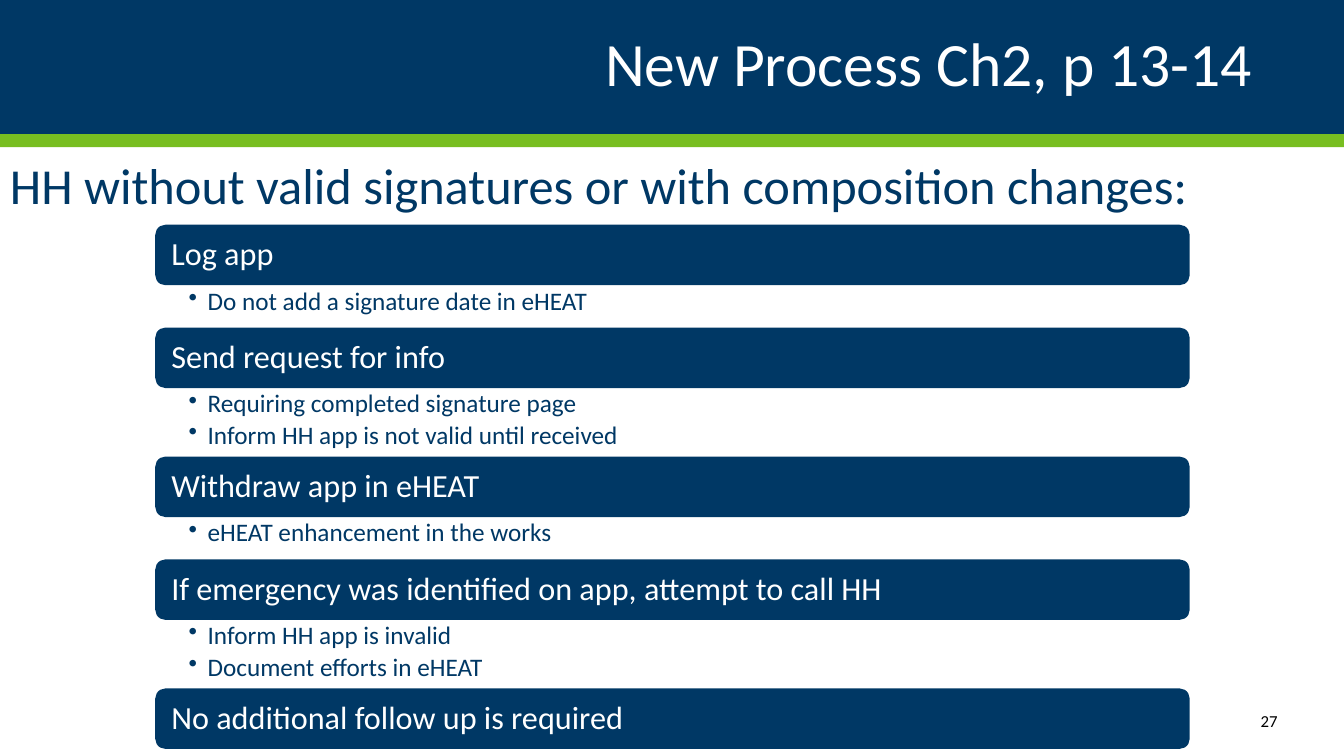
"""Build the slide on handling households without valid signatures."""
from dataclasses import dataclass

from pptx import Presentation
from pptx import util as u
from pptx.dml.color import RGBColor
from pptx.enum import shapes, text
from pptx.oxml import ns
from lxml import etree


@dataclass(frozen=True)
class Theme:
    """Colours, font and type sizes of the slide."""
    navy: str = "003865"
    green: str = "78BE21"
    white: str = "FFFFFF"
    black: str = "000000"
    font: str = "Calibri"
    title_size: int = 44
    heading_size: int = 36
    step_size: int = 23
    detail_size: int = 18
    number_size: int = 12


THEME = Theme()
SLIDE_WIDTH, SLIDE_HEIGHT = 13.33, 7.5
STEPS_LEFT, STEPS_TOP, STEPS_WIDTH = 1.54, 2.23, 10.26
BAR_HEIGHT = 0.6
DETAIL_PADDING, DETAIL_LINE = 0.16, 0.26
STEPS = [
    ("Log app", ["Do not add a signature date in eHEAT"]),
    ("Send request for info", ["Requiring completed signature page",
                               "Inform HH app is not valid until received"]),
    ("Withdraw app in eHEAT", ["eHEAT enhancement in the works"]),
    ("If emergency was identified on app, attempt to call HH",
     ["Inform HH app is invalid", "Document efforts in eHEAT"]),
    ("No additional follow up is required", []),
]


def box(left, top, width, height):
    """Return a position and size in inches as lengths."""
    return [u.Inches(value) for value in (left, top, width, height)]


def add_bullet(paragraph, indent=0.19):
    """Give a paragraph a hanging round bullet."""
    properties = paragraph._p.get_or_add_pPr()
    properties.set("marL", str(u.Inches(indent)))
    properties.set("indent", str(-u.Inches(indent)))
    etree.SubElement(properties, ns.qn("a:buChar")).set("char", "•")


def write_text(shape, lines, *, size, color, align=text.PP_ALIGN.LEFT,
               anchor=text.MSO_ANCHOR.MIDDLE, insets=(0.1, 0.05, 0.1, 0.05),
               line_spacing=1.0, space_after=0, bullets=False):
    """Fill a shape with one formatted paragraph for each line."""
    frame = shape.text_frame
    frame.word_wrap = True
    frame.auto_size = text.MSO_AUTO_SIZE.NONE
    frame.vertical_anchor = anchor
    (frame.margin_left, frame.margin_top,
     frame.margin_right, frame.margin_bottom) = box(*insets)
    for index, line in enumerate(lines):
        paragraph = frame.add_paragraph() if index else frame.paragraphs[0]
        paragraph.alignment = align
        paragraph.line_spacing = line_spacing
        paragraph.space_before = u.Pt(0)
        paragraph.space_after = u.Pt(space_after)
        if bullets:
            add_bullet(paragraph)
        run = paragraph.add_run()
        run.text = line
        run.font.name = THEME.font
        run.font.size = u.Pt(size)
        run.font.color.rgb = RGBColor.from_string(color)


def add_block(slide, kind, place, color):
    """Add a filled preset shape without line or shadow."""
    shape = slide.shapes.add_shape(kind, *box(*place))
    shape.shadow.inherit = False
    shape.fill.solid()
    shape.fill.fore_color.rgb = RGBColor.from_string(color)
    shape.line.fill.background()
    return shape


def add_label(slide, place, lines, **style):
    """Add a text box with formatted lines."""
    write_text(slide.shapes.add_textbox(*box(*place)), lines, **style)


def add_title(slide, line):
    """Turn the title placeholder into the navy header band."""
    title = slide.shapes.title
    title.left, title.top, title.width, title.height = box(0, 0, SLIDE_WIDTH, 1.33)
    title.fill.solid()
    title.fill.fore_color.rgb = RGBColor.from_string(THEME.navy)
    write_text(title, [line], size=THEME.title_size, color=THEME.white,
               align=text.PP_ALIGN.RIGHT, insets=(0.9, 0.05, 0.9, 0.05),
               line_spacing=0.9)


def add_step(slide, top, step, details):
    """Add a step bar with its bullets and return the next top."""
    bar = add_block(slide, shapes.MSO_SHAPE.ROUNDED_RECTANGLE,
                    (STEPS_LEFT, top, STEPS_WIDTH, BAR_HEIGHT), THEME.navy)
    write_text(bar, [step], size=THEME.step_size, color=THEME.white,
               insets=(0.13, 0.1, 0.13, 0.1), line_spacing=0.9)
    top += BAR_HEIGHT
    if not details:
        return top
    height = DETAIL_PADDING + DETAIL_LINE * len(details)
    add_label(slide, (STEPS_LEFT, top, STEPS_WIDTH, height), details,
              size=THEME.detail_size, color=THEME.navy,
              anchor=text.MSO_ANCHOR.TOP, insets=(0.33, 0.03, 0.18, 0.03),
              line_spacing=0.9, space_after=3, bullets=True)
    return top + height


def main():
    """Build and save the presentation."""
    presentation = Presentation()
    presentation.slide_width = u.Inches(SLIDE_WIDTH)
    presentation.slide_height = u.Inches(SLIDE_HEIGHT)
    slide = presentation.slides.add_slide(presentation.slide_layouts[5])
    add_title(slide, "New Process Ch2, p 13-14")
    add_block(slide, shapes.MSO_SHAPE.RECTANGLE,
              (0, 1.33, SLIDE_WIDTH, 0.13), THEME.green)
    add_label(slide, (11.17, 6.95, 1.6, 0.4), ["27"], size=THEME.number_size,
              color=THEME.black, align=text.PP_ALIGN.RIGHT)
    top = STEPS_TOP
    for step, details in STEPS:
        top = add_step(slide, top, step, details)
    add_label(slide, (0, 1.48, SLIDE_WIDTH, 0.71),
              ["HH without valid signatures or with composition changes:"],
              size=THEME.heading_size, color=THEME.navy,
              anchor=text.MSO_ANCHOR.TOP)
    presentation.save("out.pptx")


if __name__ == "__main__":
    main()
